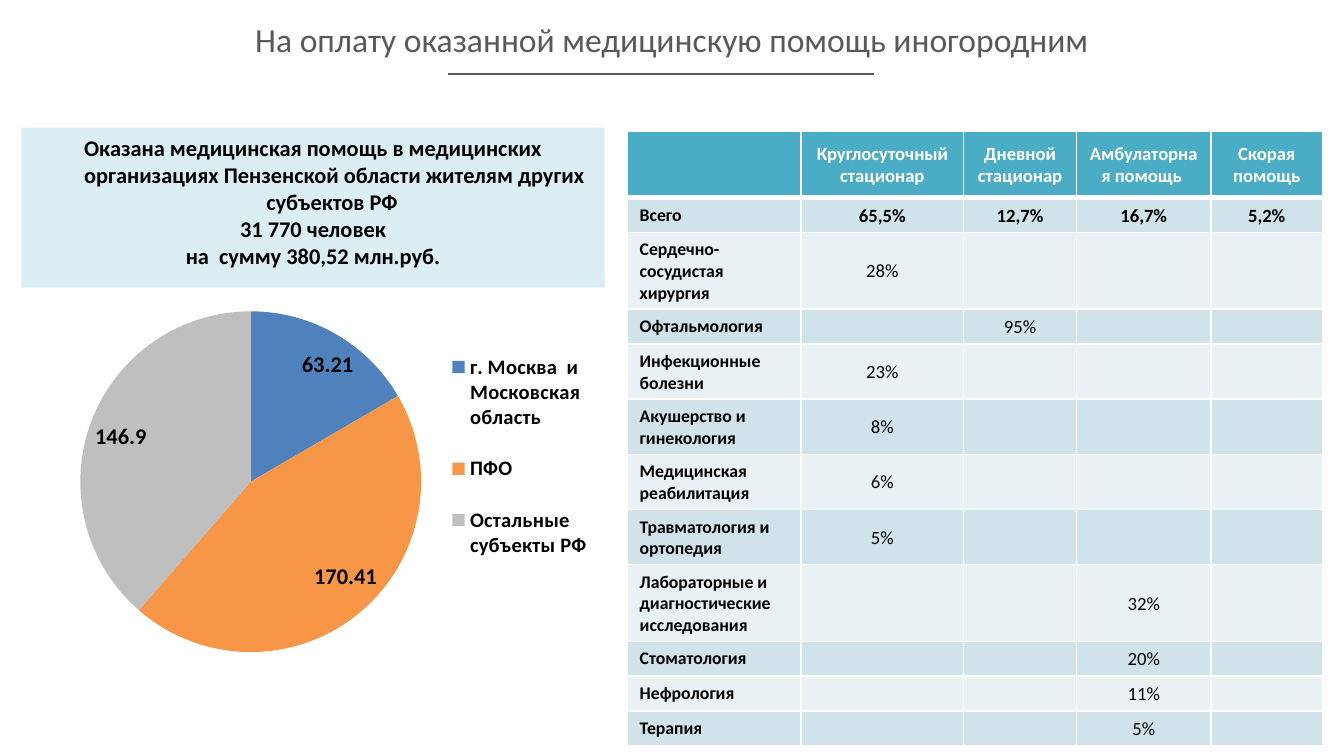
"""Build a slide on paying for medical care given to non-residents."""
from typing import NamedTuple

from lxml import etree
from pptx import Presentation
from pptx.chart.data import CategoryChartData
from pptx.dml.color import RGBColor
from pptx.enum.chart import XL_CHART_TYPE, XL_LABEL_POSITION, XL_LEGEND_POSITION
from pptx.enum.shapes import MSO_CONNECTOR, MSO_SHAPE
from pptx.enum.text import MSO_ANCHOR, PP_ALIGN
from pptx.oxml import parse_xml
from pptx.oxml.ns import nsdecls, qn
from pptx.util import Inches, Pt

PIE = XL_CHART_TYPE.PIE
BEST_FIT = XL_LABEL_POSITION.BEST_FIT
LEGEND_RIGHT = XL_LEGEND_POSITION.RIGHT
STRAIGHT = MSO_CONNECTOR.STRAIGHT
RECTANGLE = MSO_SHAPE.RECTANGLE
MIDDLE, TOP = MSO_ANCHOR.MIDDLE, MSO_ANCHOR.TOP
CENTER, LEFT = PP_ALIGN.CENTER, PP_ALIGN.LEFT

FONT = "Calibri"
WHITE = RGBColor(0xFF, 0xFF, 0xFF)
BLACK = RGBColor(0x00, 0x00, 0x00)
GREY = RGBColor(0x59, 0x59, 0x59)
PALE_BLUE = RGBColor(0xDB, 0xEE, 0xF4)
TEAL = RGBColor(0x4B, 0xAC, 0xC6)
DARK_BAND = RGBColor(0xD0, 0xE3, 0xEA)
LIGHT_BAND = RGBColor(0xE9, 0xF1, 0xF5)

TITLE = "На оплату оказанной медицинскую помощь иногородним"
SUMMARY = (
    "Оказана медицинская помощь в медицинских организациях Пензенской области жителям других субъектов РФ ",
    "31 770 человек",
    "на  сумму 380,52 млн.руб.",
)
HEADERS = ("", "Круглосуточный стационар", "Дневной стационар", "Амбулаторная помощь ", "Скорая помощь")
COLUMN_WIDTHS = (1.29, 1.21, 0.84, 1, 0.83)
HEADER_HEIGHT = 0.49


class Region(NamedTuple):
    name: str
    amount: float
    color: RGBColor


class CareProfile(NamedTuple):
    name: str
    height: float
    shares: tuple[str, str, str, str]


REGIONS = (
    Region("г. Москва  и Московская область ", 63.21, RGBColor(0x4F, 0x81, 0xBD)),
    Region("ПФО ", 170.41, RGBColor(0xF7, 0x96, 0x46)),
    Region("Остальные субъекты РФ", 146.9, RGBColor(0xBF, 0xBF, 0xBF)),
)
PROFILES = (
    CareProfile("Всего", 0.26, ("65,5%", "12,7%", "16,7%", "5,2%")),
    CareProfile("Сердечно-сосудистая хирургия", 0.54, ("28%", "", "", "")),
    CareProfile("Офтальмология", 0.24, ("", "95%", "", "")),
    CareProfile("Инфекционные болезни", 0.39, ("23%", "", "", "")),
    CareProfile("Акушерство и гинекология", 0.39, ("8%", "", "", "")),
    CareProfile("Медицинская реабилитация", 0.39, ("6%", "", "", "")),
    CareProfile("Травматология и ортопедия", 0.39, ("5%", "", "", "")),
    CareProfile("Лабораторные и диагностические исследования", 0.54, ("", "", "32%", "")),
    CareProfile("Стоматология", 0.24, ("", "", "20%", "")),
    CareProfile("Нефрология", 0.24, ("", "", "11%", "")),
    CareProfile("Терапия", 0.24, ("", "", "5%", "")),
)


def set_font(font, size: float, color: RGBColor, bold: bool) -> None:
    font.name, font.size, font.bold = FONT, Pt(size), bold
    font.color.rgb = color


def set_layout(element, x: float, y: float, width: float, height: float, inner: bool = False) -> None:
    for old in element.findall(qn("c:layout")):
        element.remove(old)
    target = '<c:layoutTarget val="inner"/>' if inner else ""
    layout = parse_xml(
        f'<c:layout {nsdecls("c")}><c:manualLayout>{target}'
        '<c:xMode val="edge"/><c:yMode val="edge"/>'
        f'<c:x val="{x}"/><c:y val="{y}"/><c:w val="{width}"/><c:h val="{height}"/>'
        "</c:manualLayout></c:layout>"
    )
    element.insert(0 if inner else 1, layout)


def add_title(slide) -> None:
    title = slide.shapes.title
    title.left, title.top, title.width, title.height = map(Inches, (0.16, -0.03, 9.68, 0.64))
    frame = title.text_frame
    frame.text = TITLE
    frame.vertical_anchor = MIDDLE
    paragraph = frame.paragraphs[0]
    paragraph.alignment = CENTER
    set_font(paragraph.font, 18, GREY, False)
    underline = slide.shapes.add_connector(STRAIGHT, Inches(3.33), Inches(0.55), Inches(6.5), Inches(0.55))
    underline.line.color.rgb = GREY
    underline.line.width = Pt(1)
    etree.SubElement(underline._element.spPr, qn("a:effectLst"))


def add_summary(slide) -> None:
    panel = slide.shapes.add_shape(RECTANGLE, Inches(0.16), Inches(0.95), Inches(4.34), Inches(1.19))
    panel.shadow.inherit = False
    panel.fill.solid()
    panel.fill.fore_color.rgb = PALE_BLUE
    panel.line.fill.background()
    frame = panel.text_frame
    frame.word_wrap = True
    frame.vertical_anchor = TOP
    frame.text = "\n".join(SUMMARY)
    for paragraph in frame.paragraphs:
        paragraph.alignment = CENTER
        properties = paragraph._p.get_or_add_pPr()
        properties.set("marL", str(Inches(0.32)))
        properties.set("indent", str(Inches(-0.32)))
        set_font(paragraph.font, 12, BLACK, True)


def add_region_chart(slide) -> None:
    data = CategoryChartData()
    data.categories = [region.name for region in REGIONS]
    data.add_series("Series 1", [region.amount for region in REGIONS])
    frame = slide.shapes.add_chart(PIE, Inches(0.26), Inches(1.81), Inches(4.4), Inches(3.17), data)
    chart = frame.chart
    chart.has_title = False
    set_font(chart.font, 10, BLACK, False)
    chart.has_legend = True
    chart.legend.position = LEGEND_RIGHT
    chart.legend.include_in_layout = False
    set_font(chart.legend.font, 11, BLACK, True)
    plot = chart.plots[0]
    plot.vary_by_categories = True
    for index, region in enumerate(REGIONS):
        fill = plot.series[0].points[index].format.fill
        fill.solid()
        fill.fore_color.rgb = region.color
    plot.has_data_labels = True
    labels = plot.data_labels
    labels.show_value = True
    labels.show_percentage = False
    labels.position = BEST_FIT
    set_font(labels.font, 12, BLACK, True)
    set_layout(chart._chartSpace.chart.plotArea, 0.07, 0.16, 0.59, 0.8, inner=True)
    set_layout(chart.legend._element, 0.67, 0.2, 0.3, 0.6)


def format_cell(cell, text: str, fill: RGBColor, color: RGBColor, bold: bool,
                label: bool = False, bottom_width: float = 1) -> None:
    cell.fill.solid()
    cell.fill.fore_color.rgb = fill
    cell.text = text
    cell.vertical_anchor = TOP if label else MIDDLE
    cell.margin_left = cell.margin_right = Inches(0.09)
    cell.margin_top, cell.margin_bottom = Inches(0.05), Inches(0.04)
    paragraph = cell.text_frame.paragraphs[0]
    paragraph.alignment = LEFT if label else CENTER
    size = 9.5 if label else 10
    set_font(paragraph.font, size, color, bold)
    if not text:
        etree.SubElement(paragraph._p, qn("a:endParaRPr")).set("sz", str(size * 100))
    for index, side in enumerate("LRTB"):
        width = Pt(bottom_width if side == "B" else 1)
        border = parse_xml(
            f'<a:ln{side} {nsdecls("a")} w="{width}"><a:solidFill>'
            f'<a:srgbClr val="{WHITE}"/></a:solidFill></a:ln{side}>'
        )
        cell._tc.tcPr.insert(index, border)


def add_care_table(slide) -> None:
    heights = [HEADER_HEIGHT] + [profile.height for profile in PROFILES]
    table = slide.shapes.add_table(
        len(heights), len(HEADERS), Inches(4.67), Inches(0.98),
        Inches(sum(COLUMN_WIDTHS)), Inches(sum(heights)),
    ).table
    for column, width in zip(table.columns, COLUMN_WIDTHS):
        column.width = Inches(width)
    for row, height in zip(table.rows, heights):
        row.height = Inches(height)
    for column, header in enumerate(HEADERS):
        format_cell(table.cell(0, column), header, TEAL, WHITE, True, bottom_width=3)
    for row, profile in enumerate(PROFILES, start=1):
        band = DARK_BAND if row % 2 else LIGHT_BAND
        format_cell(table.cell(row, 0), profile.name, band, BLACK, True, label=True)
        for column, share in enumerate(profile.shares, start=1):
            format_cell(table.cell(row, column), share, band, BLACK, row == 1)


def main() -> None:
    presentation = Presentation()
    presentation.slide_width = Inches(10)
    presentation.slide_height = presentation.slide_width * 9 // 16
    slide = presentation.slides.add_slide(presentation.slide_layouts[5])
    add_region_chart(slide)
    add_title(slide)
    add_summary(slide)
    add_care_table(slide)
    presentation.save("out.pptx")


if __name__ == "__main__":
    main()
